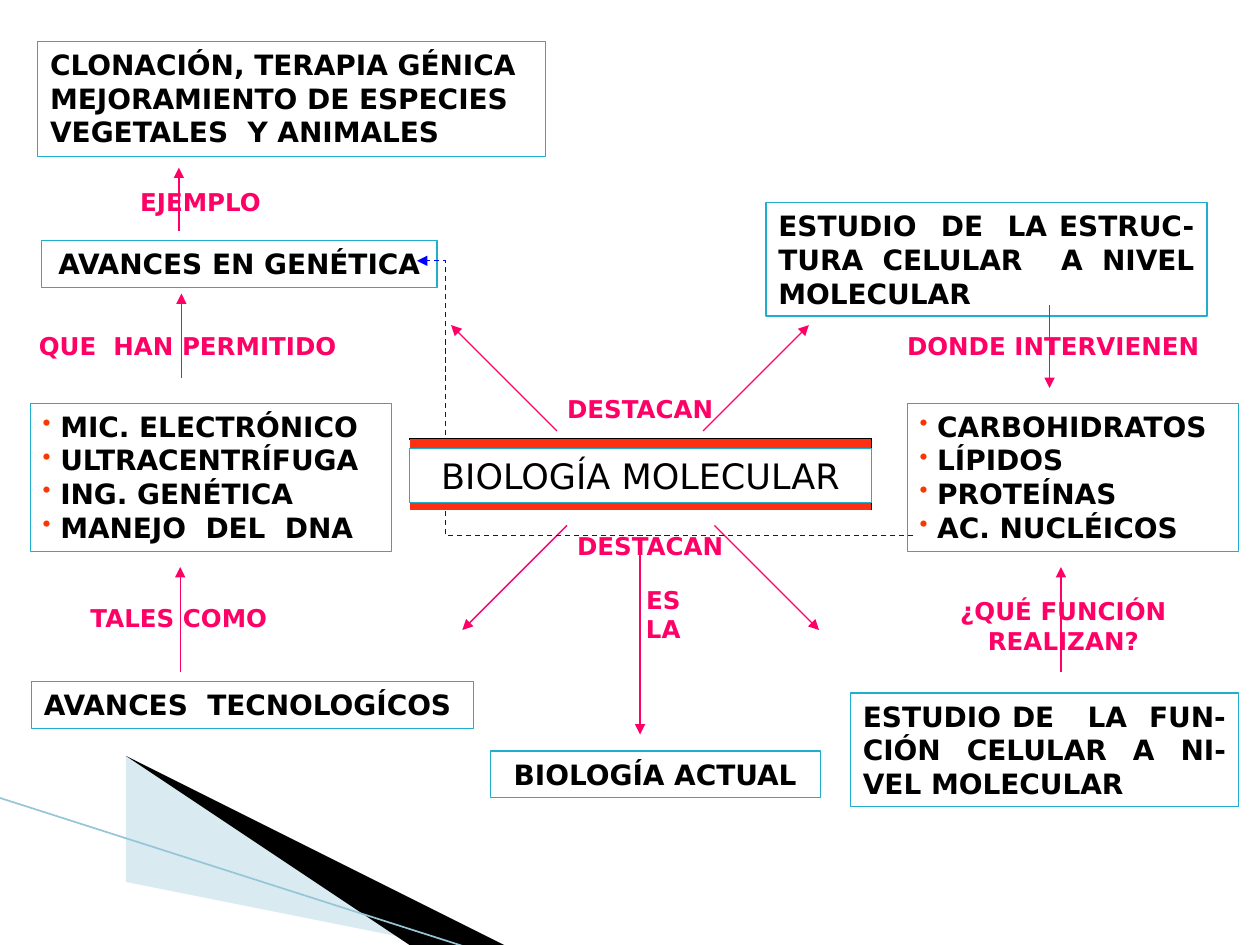
from dataclasses import dataclass

from lxml.etree import SubElement
from pptx import Presentation
from pptx.dml.color import RGBColor
from pptx.enum.dml import MSO_LINE
from pptx.enum.shapes import MSO_CONNECTOR as CONNECTOR, MSO_SHAPE as SHAPE
from pptx.enum.text import MSO_ANCHOR as ANCHOR, MSO_AUTO_SIZE as FIT, PP_ALIGN as ALIGN
from pptx.oxml.ns import qn
from pptx.util import Inches, Pt

FONT = "DejaVu Sans"
WHITE = RGBColor(0xFF, 0xFF, 0xFF)
BLACK = RGBColor(0x00, 0x00, 0x00)
TEAL = RGBColor(0x1F, 0xAE, 0xCD)
PINK = RGBColor(0xFF, 0x00, 0x66)
BLUE = RGBColor(0x00, 0x00, 0xFF)
RED = RGBColor(0xFE, 0x30, 0x14)
ORANGE = RGBColor(0xF8, 0x38, 0x04)
PALE_BLUE = RGBColor(0xA0, 0xCB, 0xDC)
EDGE_BLUE = RGBColor(0x97, 0xC5, 0xD8)
BULLET_INDENT = Inches(0.14)


@dataclass
class Concept:
    left: float
    top: float
    width: float
    height: float
    lines: list[str]
    align: ALIGN = ALIGN.LEFT
    bullets: bool = False
    wrap: bool = False
    size: int = 16
    bold: bool = True


@dataclass
class Link:
    left: float
    top: float
    width: float
    lines: list[str]
    align: ALIGN = ALIGN.CENTER
    height: float = 0.33


@dataclass
class Arrow:
    x1: float
    y1: float
    x2: float
    y2: float


CONCEPTS = [
    Concept(0.33, 1.91, 3.14, 0.37, ["AVANCES EN GENÉTICA"], ALIGN.CENTER),
    Concept(0.3, 0.33, 4.03, 0.91, ["CLONACIÓN, TERAPIA GÉNICA", "MEJORAMIENTO DE ESPECIES",
                                    "VEGETALES  Y ANIMALES"]),
    Concept(6.08, 1.61, 3.5, 0.9, ["ESTUDIO  DE  LA ESTRUC- TURA CELULAR  A NIVEL MOLECULAR"],
            ALIGN.JUSTIFY, wrap=True),
    Concept(7.2, 3.2, 2.63, 1.18, ["CARBOHIDRATOS", "LÍPIDOS", "PROTEÍNAS", "AC. NUCLÉICOS"],
            bullets=True),
    Concept(6.75, 5.5, 3.08, 0.9, ["ESTUDIO DE   LA  FUN-CIÓN CELULAR A NI- VEL MOLECULAR"],
            ALIGN.JUSTIFY, wrap=True),
    Concept(0.25, 5.41, 3.51, 0.37, ["AVANCES  TECNOLOGÍCOS"]),
    Concept(0.24, 3.2, 2.87, 1.18, ["MIC. ELECTRÓNICO", "ULTRACENTRÍFUGA", "ING. GENÉTICA",
                                    "MANEJO  DEL  DNA"], bullets=True),
    Concept(3.89, 5.96, 2.62, 0.37, ["BIOLOGÍA ACTUAL"], ALIGN.CENTER),
]
CENTRAL = Concept(3.25, 3.56, 3.67, 0.43, ["BIOLOGÍA MOLECULAR"], ALIGN.CENTER,
                  wrap=True, size=20, bold=False)

LINKS = [
    Link(4.38, 3.08, 1.38, ["DESTACAN"], ALIGN.RIGHT),
    Link(0.98, 1.44, 1.19, ["EJEMPLO"], ALIGN.RIGHT),
    Link(7.06, 2.58, 2.6, ["DONDE INTERVIENEN"]),
    Link(7.47, 4.68, 1.94, ["¿QUÉ FUNCIÓN", "REALIZAN?"], height=0.57),
    Link(0.18, 2.58, 2.62, ["QUE  HAN PERMITIDO"]),
    Link(0.62, 4.74, 1.6, ["TALES COMO"]),
    Link(4.69, 4.83, 0.81, ["ES LA"], ALIGN.RIGHT),
    Link(4.46, 4.17, 1.38, ["DESTACAN"], ALIGN.RIGHT),
]

ARROWS = [
    Arrow(5.67, 4.17, 6.5, 5),
    Arrow(4.42, 3.42, 3.58, 2.58),
    Arrow(1.42, 1.83, 1.42, 1.33),
    Arrow(5.58, 3.42, 6.42, 2.58),
    Arrow(8.33, 2.42, 8.33, 3.08),
    Arrow(8.42, 5.33, 8.42, 4.5),
    Arrow(4.5, 4.17, 3.67, 5),
    Arrow(1.44, 3, 1.44, 2.33),
    Arrow(1.43, 5.33, 1.43, 4.5),
    Arrow(5.08, 4.33, 5.08, 5.83),
]


def add_bullet(paragraph) -> None:
    props = paragraph._p.get_or_add_pPr()
    props.set("marL", str(BULLET_INDENT))
    props.set("indent", str(-BULLET_INDENT))
    SubElement(SubElement(props, qn("a:buClr")), qn("a:srgbClr"), val=str(ORANGE))
    SubElement(props, qn("a:buSzPct"), val="85000")
    SubElement(props, qn("a:buChar"), char="•")


def write_lines(frame, lines: list[str], align: ALIGN, size: int, color: RGBColor,
                bold: bool = True, bullets: bool = False) -> None:
    frame.text = "\n".join(lines)
    for paragraph in frame.paragraphs:
        if bullets:
            add_bullet(paragraph)
        paragraph.alignment = align
        font = paragraph.font
        font.name, font.size, font.bold = FONT, Pt(size), bold
        font.color.rgb = color


def add_box(slide, left: float, top: float, width: float, height: float,
            fill: RGBColor, edge: RGBColor):
    box = slide.shapes.add_shape(SHAPE.RECTANGLE, Inches(left), Inches(top),
                                 Inches(width), Inches(height))
    box.shadow.inherit = False
    box.fill.solid()
    box.fill.fore_color.rgb = fill
    box.line.color.rgb = edge
    box.line.width = Pt(0.75)
    return box


def add_concept(slide, item: Concept) -> None:
    box = add_box(slide, item.left, item.top, item.width, item.height, WHITE, TEAL)
    frame = box.text_frame
    frame.word_wrap = item.wrap
    frame.auto_size = FIT.SHAPE_TO_FIT_TEXT
    frame.vertical_anchor = ANCHOR.TOP
    write_lines(frame, item.lines, item.align, item.size, BLACK, item.bold, item.bullets)


def add_link(slide, link: Link) -> None:
    frame = slide.shapes.add_textbox(Inches(link.left), Inches(link.top),
                                     Inches(link.width), Inches(link.height)).text_frame
    frame.word_wrap = False
    frame.auto_size = FIT.SHAPE_TO_FIT_TEXT
    frame.vertical_anchor = ANCHOR.BOTTOM
    write_lines(frame, link.lines, link.align, 14, PINK)


def add_line(slide, path: Arrow, color: RGBColor, width: float = 0.75,
             head: bool = False, kind: CONNECTOR = CONNECTOR.STRAIGHT):
    line = slide.shapes.add_connector(kind, Inches(path.x1), Inches(path.y1),
                                      Inches(path.x2), Inches(path.y2))
    line.line.color.rgb = color
    line.line.width = Pt(width)
    if head:
        SubElement(line.line._get_or_add_ln(), qn("a:tailEnd"), type="triangle")
    SubElement(line._element.spPr, qn("a:effectLst"))
    return line


def add_wedge(slide, points: list[tuple[float, float]], color: RGBColor,
              opacity: int = 100) -> None:
    builder = slide.shapes.build_freeform(*points[0], scale=Inches(1))
    builder.add_line_segments(points[1:], close=True)
    wedge = builder.convert_to_shape()
    wedge.shadow.inherit = False
    wedge.fill.solid()
    wedge.fill.fore_color.rgb = color
    wedge.line.fill.background()
    if opacity < 100:
        tone = wedge._element.spPr.find(f"{qn('a:solidFill')}/{qn('a:srgbClr')}")
        SubElement(tone, qn("a:alpha"), val=str(opacity * 1000))


def main() -> None:
    deck = Presentation()
    deck.slide_width, deck.slide_height = Inches(10), Inches(7.5)
    slide = deck.slides.add_slide(deck.slide_layouts[6])

    # Corner decoration
    add_wedge(slide, [(0.55, 6.51), (5.95, 7.51), (4.56, 7.51), (0.55, 6.5)], PALE_BLUE, 40)
    add_wedge(slide, [(0.53, 6.49), (4.57, 7.51), (3.72, 7.52), (0.54, 6.5)], BLACK)
    add_line(slide, Arrow(-0.01, 6.33, 3.71, 7.52), EDGE_BLUE, 0.95)

    # Concepts, arrows and the words that link them
    for item in CONCEPTS:
        add_concept(slide, item)
    for arrow in ARROWS:
        add_line(slide, arrow, PINK, head=True)
    for link in LINKS:
        add_link(slide, link)

    # Dashed return from the molecules to genetics
    feedback = add_line(slide, Arrow(7.25, 4.25, 3.31, 2.07), BLUE, head=True,
                        kind=CONNECTOR.ELBOW)
    feedback.line.dash_style = MSO_LINE.DASH
    bend = feedback._element.spPr.prstGeom.get_or_add_avLst()
    SubElement(bend, qn("a:gd"), name="adj1", fmla="val 94300")

    # Central concept on its red band
    add_box(slide, 3.25, 3.48, 3.67, 0.57, RED, BLACK)
    add_line(slide, Arrow(6.92, 4.05, 3.25, 4.05), WHITE)
    add_line(slide, Arrow(3.25, 3.49, 3.25, 4.06), WHITE)
    add_concept(slide, CENTRAL)

    deck.save("out.pptx")


if __name__ == "__main__":
    main()
